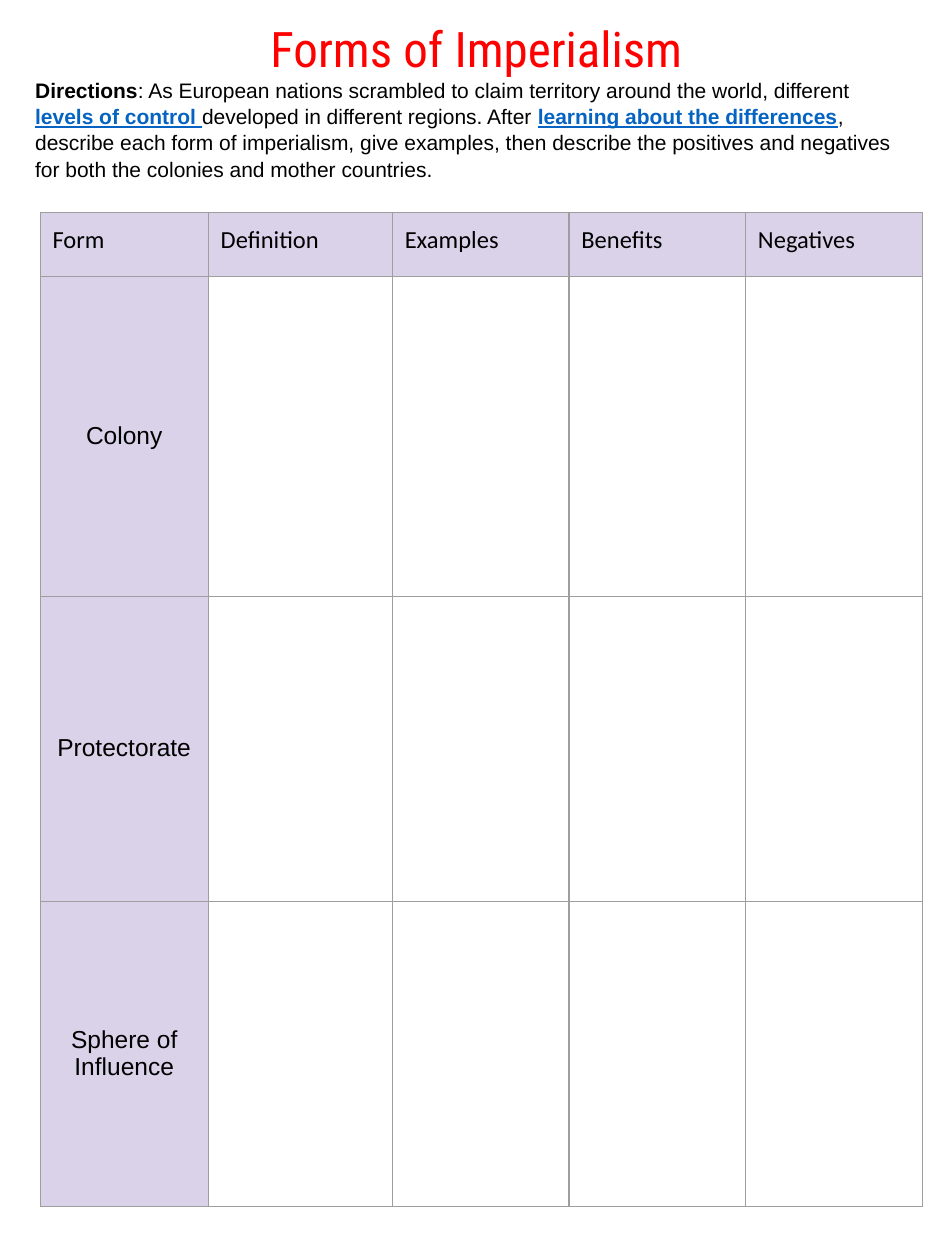
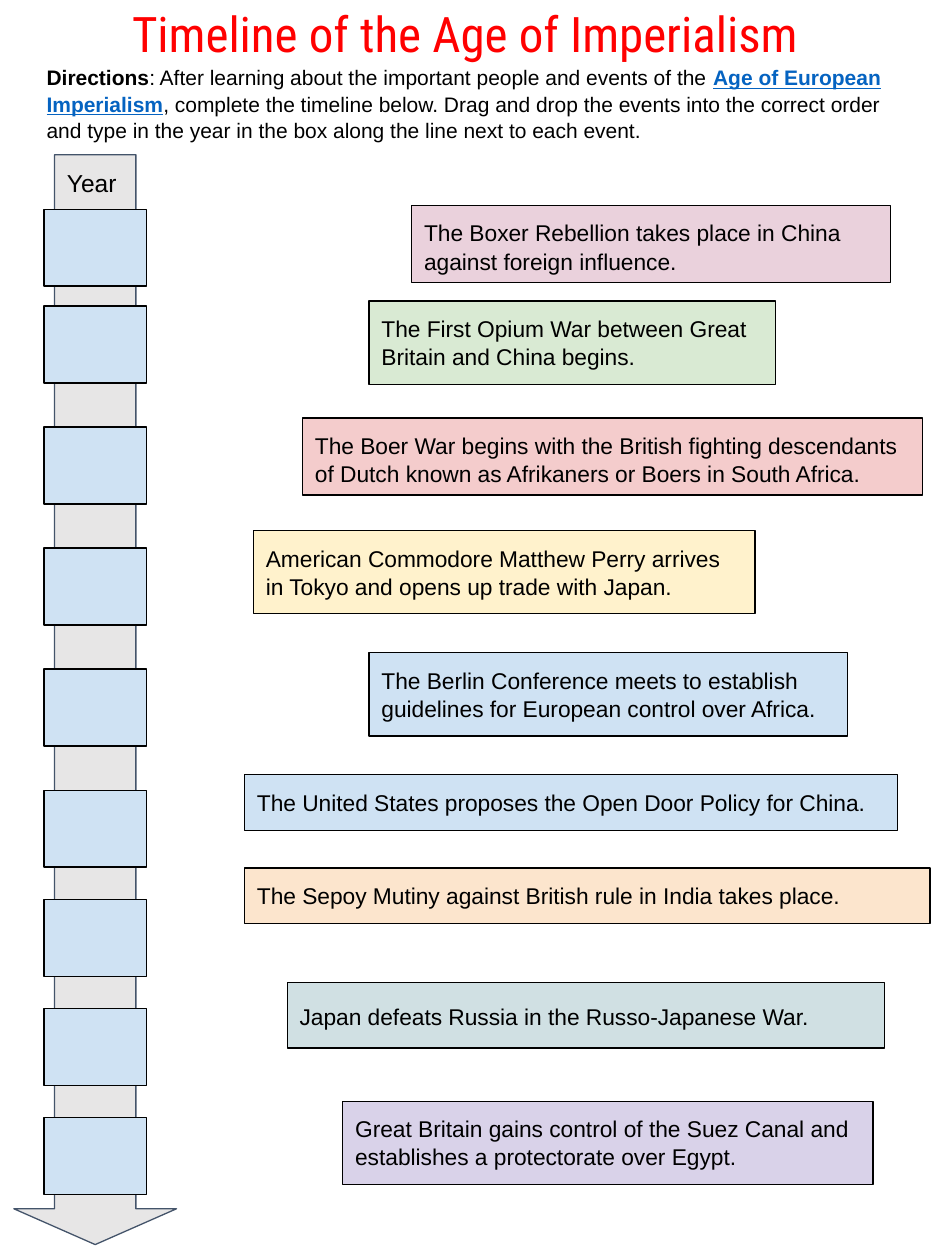
from dataclasses import dataclass
from itertools import accumulate

from pptx import Presentation
from pptx.dml.color import RGBColor
from pptx.enum.shapes import MSO_SHAPE as Preset
from pptx.enum.text import MSO_ANCHOR as Anchor, MSO_AUTO_SIZE as AutoSize, PP_ALIGN as Align
from pptx.oxml import parse_xml
from pptx.oxml.ns import nsdecls
from pptx.util import Cm, Pt


@dataclass(frozen=True)
class Theme:
    title: str = "FF0000"
    text: str = "000000"
    link: str = "0563C1"
    grid: str = "9E9E9E"
    arrow: str = "E7E6E6"
    arrow_edge: str = "44546A"
    lavender: str = "D9D2E9"
    sky: str = "CFE2F3"
    rose: str = "EAD1DC"
    mint: str = "D9EAD3"
    coral: str = "F4CCCC"
    cream: str = "FFF2CC"
    peach: str = "FCE5CD"
    teal: str = "D0E0E3"
    title_font: str = "Roboto Condensed"
    body_font: str = "Arial"
    header_font: str = "Calibri"
    title_size: int = 28
    label_size: int = 14
    event_size: int = 13
    directions_size: int = 12
    line_width: float = 0.75
    text_spacing: float = 1.04
    label_spacing: float = 0.96
    padding: float = 0.25


def rgb(value):
    return RGBColor.from_string(value)


class Worksheet:
    def __init__(self, theme):
        self.theme = theme
        self.deck = Presentation()
        self.deck.slide_width = Cm(19.05)
        self.deck.slide_height = Cm(25.4)
        self.slide = None

    def new_slide(self, heading, left, top):
        self.slide = self.deck.slides.add_slide(self.deck.slide_layouts[5])
        title = self.slide.shapes.title
        title.left, title.top, title.width, title.height = map(Cm, (left, top, 17.02, 1.45))
        frame = title.text_frame
        frame.text = heading
        frame.auto_size = AutoSize.NONE
        frame.vertical_anchor = Anchor.TOP
        theme = self.theme
        self.style(frame.paragraphs[0], theme.title_size, theme.title_font, theme.title, Align.CENTER)

    def style(self, paragraph, size, font=None, color=None, align=Align.LEFT, spacing=1.0):
        paragraph.alignment = align
        paragraph.line_spacing = spacing
        for run in paragraph.runs:
            run.font.size = Pt(size)
            run.font.name = font or self.theme.body_font
            run.font.color.rgb = rgb(color or self.theme.text)

    def directions(self, box, *phrases):
        frame = self.slide.shapes.add_textbox(*map(Cm, box)).text_frame
        frame.word_wrap = True
        frame.vertical_anchor = Anchor.MIDDLE
        paragraph = frame.paragraphs[0]
        for phrase in ("Directions", *phrases):
            paragraph.add_run().text = phrase
        self.style(paragraph, self.theme.directions_size, spacing=self.theme.text_spacing)
        paragraph.runs[0].font.bold = True
        for linked in paragraph.runs[2::2]:
            linked.font.bold = linked.font.underline = True
            linked.font.color.rgb = rgb(self.theme.link)

    def pad(self, holder):
        holder.margin_left = holder.margin_right = Cm(self.theme.padding)
        holder.margin_top = holder.margin_bottom = Cm(self.theme.padding)

    def panel(self, box, fill, text="", size=None, anchor=Anchor.TOP, preset=Preset.RECTANGLE, edge=None):
        panel = self.slide.shapes.add_shape(preset, *map(Cm, box))
        panel.shadow.inherit = False
        panel.fill.solid()
        panel.fill.fore_color.rgb = rgb(fill)
        panel.line.color.rgb = rgb(edge or self.theme.text)
        panel.line.width = Pt(self.theme.line_width)
        if text:
            frame = panel.text_frame
            frame.text = text
            frame.word_wrap = True
            frame.vertical_anchor = anchor
            self.pad(frame)
            self.style(frame.paragraphs[0], size, spacing=self.theme.text_spacing)
        return panel

    def cell_borders(self, cell):
        properties = cell._tc.get_or_add_tcPr()
        for side in ("lnL", "lnR", "lnT", "lnB"):
            properties.append(parse_xml(
                f'<a:{side} {nsdecls("a")} w="{Pt(self.theme.line_width)}"><a:solidFill>'
                f'<a:srgbClr val="{self.theme.grid}"/></a:solidFill></a:{side}>'))

    def comparison_grid(self, left, top, headers, forms, widths, heights):
        theme = self.theme
        grid = self.slide.shapes.add_table(
            len(heights), len(widths), Cm(left), Cm(top), Cm(sum(widths)), Cm(sum(heights))).table
        grid.first_row = grid.horz_banding = False
        for column, width in zip(grid.columns, widths):
            column.width = Cm(width)
        for row, height in zip(grid.rows, heights):
            row.height = Cm(height)
        for cell in grid.iter_cells():
            self.cell_borders(cell)
            self.pad(cell)
            cell.fill.background()
        header_cells = [grid.cell(0, column) for column in range(len(headers))]
        form_cells = [grid.cell(row, 0) for row in range(1, len(heights))]
        for cell, label in zip(header_cells + form_cells, headers + forms):
            cell.text = label
            cell.fill.solid()
            cell.fill.fore_color.rgb = rgb(theme.lavender)
        for cell in header_cells:
            self.style(cell.text_frame.paragraphs[0], theme.label_size, theme.header_font)
        for cell in form_cells:
            cell.vertical_anchor = Anchor.MIDDLE
            self.style(cell.text_frame.paragraphs[0], theme.label_size,
                       align=Align.CENTER, spacing=theme.label_spacing)

    def year_arrow(self, box):
        theme = self.theme
        arrow = self.panel(box, theme.arrow, "Year", theme.label_size,
                           preset=Preset.DOWN_ARROW, edge=theme.arrow_edge)
        arrow.adjustments[0] = 0.5
        arrow.adjustments[1] = 0.22

    def event(self, box, fill, text, anchor=Anchor.TOP):
        self.panel(box, fill, text, self.theme.event_size, anchor)


def forms_slide(sheet):
    sheet.new_slide("Forms of Imperialism", 1.09, 0.25)
    sheet.directions(
        (0.46, 1.37, 18.03, 2.46),
        ": As European nations scrambled to claim territory around the world, different ",
        "levels of control ",
        "developed in different regions. After ",
        "learning about the differences",
        ", describe each form of imperialism, give examples, then describe the positives "
        "and negatives for both the colonies and mother countries.")
    sheet.comparison_grid(
        0.81, 4.29,
        ["Form", "Definition", "Examples", "Benefits", "Negatives"],
        ["Colony", "Protectorate", "Sphere of Influence"],
        [3.39, 3.71] + [3.56] * 3,
        [1.28, 6.45, 6.15, 6.15])


def timeline_slide(sheet):
    theme = sheet.theme
    sheet.new_slide("Timeline of the Age of Imperialism", 0.86, -0.05)
    sheet.directions(
        (0.69, 1.09, 17.37, 1.98),
        ": After learning about the important people and events of the ",
        "Age of European Imperialism",
        ", complete the timeline below. Drag and drop the events into the correct order "
        "and type in the year in the box along the line next to each event.")
    sheet.event((8.3, 4.14, 9.65, 1.55), theme.rose,
                "The Boxer Rebellion takes place in China against foreign influence.")
    sheet.event((7.44, 6.07, 8.2, 1.68), theme.mint,
                "The First Opium War between Great Britain and China begins.")
    sheet.event((6.1, 8.43, 12.5, 1.55), theme.coral,
                "The Boer War begins with the British fighting descendants of Dutch "
                "known as Afrikaners or Boers in South Africa.")
    sheet.event((5.11, 10.69, 10.11, 1.68), theme.cream,
                "American Commodore Matthew Perry arrives in Tokyo and opens up trade with Japan.",
                Anchor.MIDDLE)
    sheet.event((7.44, 13.16, 9.65, 1.68), theme.sky,
                "The Berlin Conference meets to establish guidelines for European control over Africa.")
    sheet.event((4.93, 15.62, 13.16, 1.12), theme.sky,
                "The United States proposes the Open Door Policy for China.")
    sheet.event((4.93, 17.5, 13.82, 1.12), theme.peach,
                "The Sepoy Mutiny against British rule in India takes place.")
    sheet.event((5.79, 19.81, 12.04, 1.32), theme.teal,
                "Japan defeats Russia in the Russo-Japanese War.", Anchor.MIDDLE)
    sheet.event((6.91, 22.2, 10.69, 1.68), theme.lavender,
                "Great Britain gains control of the Suez Canal and establishes a protectorate over Egypt.")
    sheet.year_arrow((0.28, 3.12, 3.28, 21.97))
    for year_top in accumulate([4.22, 1.95] + [2.44] * 4 + [2.2] * 3):
        sheet.panel((0.89, year_top, 2.06, 1.55), theme.sky)


def main():
    sheet = Worksheet(Theme())
    forms_slide(sheet)
    timeline_slide(sheet)
    sheet.deck.save("out.pptx")


if __name__ == "__main__":
    main()
